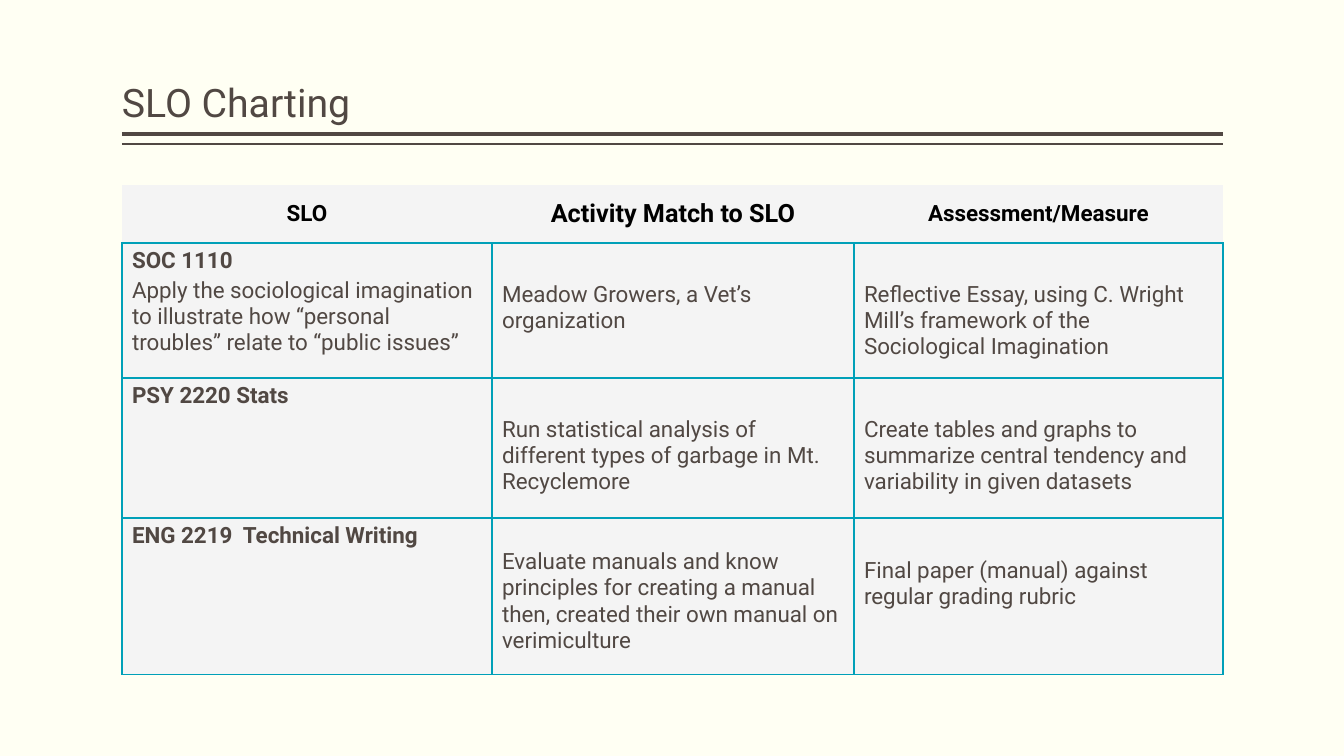
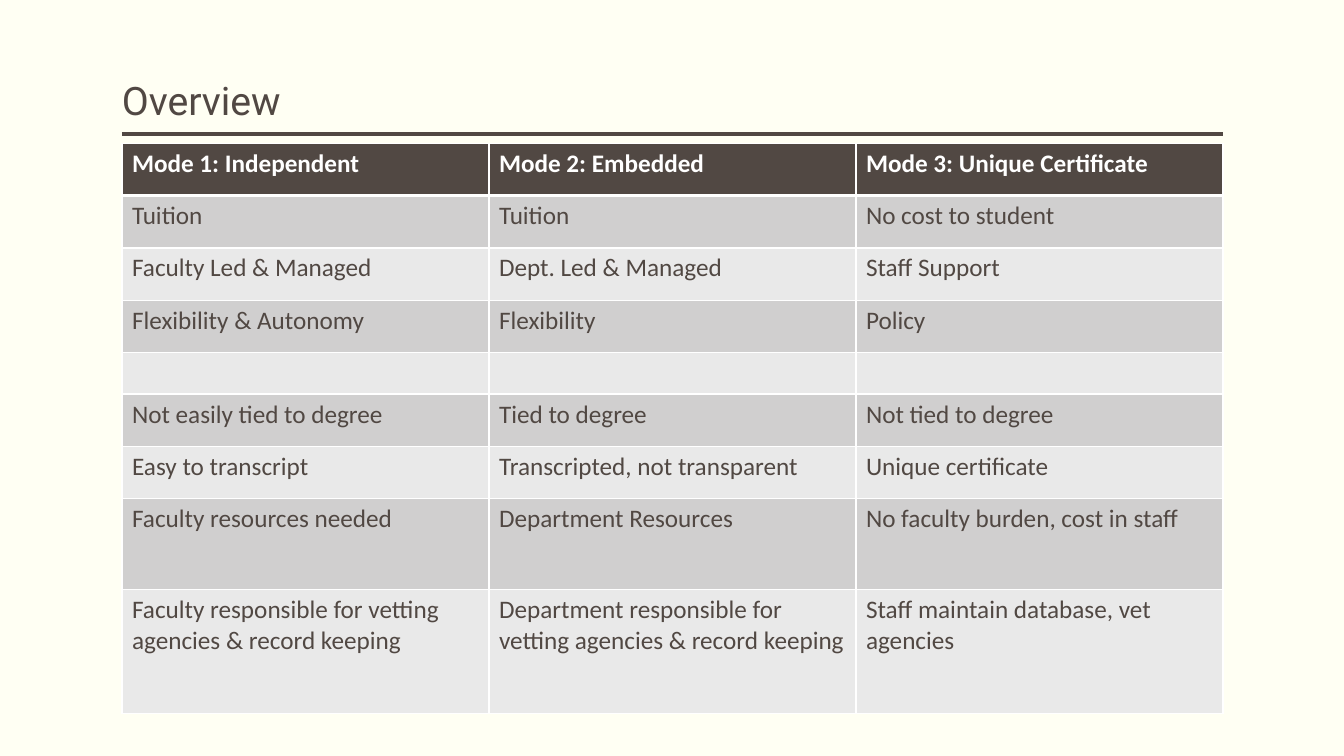
from dataclasses import dataclass

from lxml import etree
from pptx import Presentation
from pptx.dml.color import RGBColor
from pptx.enum.shapes import MSO_CONNECTOR
from pptx.enum.text import MSO_ANCHOR, PP_ALIGN
from pptx.oxml.ns import qn
from pptx.util import Inches, Pt

STRAIGHT = MSO_CONNECTOR.STRAIGHT
TOP, MIDDLE, BOTTOM = MSO_ANCHOR.TOP, MSO_ANCHOR.MIDDLE, MSO_ANCHOR.BOTTOM
LEFT, CENTER = PP_ALIGN.LEFT, PP_ALIGN.CENTER
PLAIN_TABLE = "{2D5ABB26-0587-4C30-8999-92F81FD0307C}"


@dataclass(frozen=True)
class Theme:
    paper: str = "FFFFF3"
    ink: str = "514843"
    black: str = "000000"
    white: str = "FFFFFF"
    teal: str = "00A0B8"
    pale: str = "F4F4F4"
    bands: tuple = ("D0CFCF", "E9E9E9")
    title_font: str = "Roboto"
    table_font: str = "Calibri"
    title_size: int = 28
    large_size: int = 18
    body_size: int = 16


theme = Theme()
MARGIN, CONTENT_WIDTH = 1.21, 10.92


def write(para, text, *, size, font=theme.title_font, color=theme.ink,
          bold=False, align=LEFT, after=0, spacing=1.0):
    para.alignment = align
    para.space_before = Pt(0)
    para.space_after = Pt(after)
    para.line_spacing = spacing
    span = para.add_run()
    span.text = text
    span.font.size = Pt(size)
    span.font.name = font
    span.font.bold = bold
    span.font.color.rgb = RGBColor.from_string(color)


def style_cell(cell, fill, border, widths):
    """Fill the cell and rule its edges; widths maps L, R, T, B to points."""
    properties = cell._tc.get_or_add_tcPr()
    for edge in "LRTB":
        if edge in widths:
            line = etree.SubElement(properties, qn(f"a:ln{edge}"), w=str(Pt(widths[edge])))
            paint = etree.SubElement(line, qn("a:solidFill"))
            etree.SubElement(paint, qn("a:srgbClr"), val=border)
    cell.fill.solid()
    cell.fill.fore_color.rgb = RGBColor.from_string(fill)


deck = Presentation()
deck.slide_width, deck.slide_height = Inches(13.33), Inches(7.5)
paper = deck.slide_master.background.fill
paper.solid()
paper.fore_color.rgb = RGBColor.from_string(theme.paper)

# Title, title height, table top, column widths, row heights
layouts = [
    ("SLO Charting", 1.22, 1.84, [3.67, 3.59, 3.66], [0.57, 1.34, 1.39, 1.55]),
    ("Overview", 1.2, 1.42, [CONTENT_WIDTH / 3] * 3,
     [0.52] * 4 + [0.41] + [0.52] * 2 + [0.9, 1.23]),
]
tables = []
for title, title_height, table_top, columns, rows in layouts:
    page = deck.slides.add_slide(deck.slide_layouts[6])
    for y, weight in ((1.33, 3), (1.43, 1)):
        rule = page.shapes.add_connector(
            STRAIGHT, Inches(MARGIN), Inches(y), Inches(MARGIN + CONTENT_WIDTH), Inches(y))
        rule.line.color.rgb = RGBColor.from_string(theme.ink)
        rule.line.width = Pt(weight)
        etree.SubElement(rule.element.spPr, qn("a:effectLst"))

    box = page.shapes.add_textbox(
        Inches(MARGIN), Inches(0.08), Inches(CONTENT_WIDTH), Inches(title_height))
    frame = box.text_frame
    frame.word_wrap = True
    frame.vertical_anchor = BOTTOM
    frame.margin_left = frame.margin_right = 0
    write(frame.paragraphs[0], title, size=theme.title_size, spacing=0.9)

    holder = page.shapes.add_table(
        len(rows), len(columns), Inches(MARGIN), Inches(table_top),
        Inches(CONTENT_WIDTH), Inches(sum(rows)))
    for style in holder.element.iter(qn("a:tableStyleId")):
        style.text = PLAIN_TABLE
    table = holder.table
    table.first_row = table.horz_banding = False
    for column, width in zip(table.columns, columns):
        column.width = Inches(width)
    for row, height in zip(table.rows, rows):
        row.height = Inches(height)
    tables.append(table)

slo_table, overview_table = tables

# SLO table: header
slo_headers = [
    ("SLO", theme.body_size),
    ("Activity Match to SLO", theme.large_size),
    ("Assessment/Measure", theme.body_size),
]
for cell, (text, size) in zip(slo_table.rows[0].cells, slo_headers):
    style_cell(cell, theme.pale, theme.teal, {"B": 1})
    cell.vertical_anchor = MIDDLE
    cell.margin_left = cell.margin_right = Inches(0.04)
    cell.margin_top = cell.margin_bottom = 0
    write(cell.text_frame.paragraphs[0], text, size=size, color=theme.black,
          bold=True, align=CENTER, after=3)

# SLO table: course and outcome, then (top margin, text) for activity and measure
slo_rows = [
    (["SOC 1110", "Apply the sociological imagination to illustrate how “personal troubles” "
      "relate to “public issues”"],
     (0.39, "Meadow Growers, a Vet’s organization"),
     (0.39, "Reflective Essay, using C. Wright Mill’s framework of the Sociological Imagination")),
    (["PSY 2220 Stats"],
     (0.39, "Run statistical analysis of different types of garbage in Mt. Recyclemore"),
     (0.39, "Create tables and graphs to summarize central tendency and variability in given "
      "datasets")),
    (["ENG 2219  Technical Writing"],
     (0.31, "Evaluate manuals and know principles for creating a manual then, created their own "
      "manual on verimiculture"),
     (0.39, "Final paper (manual) against regular grading rubric")),
]
for row_index, (course, *details) in enumerate(slo_rows, start=1):
    cells = list(slo_table.rows[row_index].cells)
    for cell in cells:
        style_cell(cell, theme.pale, theme.teal, dict.fromkeys("LRTB", 1))
        cell.vertical_anchor = TOP
    frame = cells[0].text_frame
    for index, text in enumerate(course):
        para = frame.add_paragraph() if index else frame.paragraphs[0]
        write(para, text, size=theme.body_size, bold=index == 0, after=0 if index else 3)
    for cell, (top_margin, text) in zip(cells[1:], details):
        cell.margin_top = Inches(top_margin)
        write(cell.text_frame.paragraphs[0], text, size=theme.body_size)

# Overview table
overview_rows = [
    ("Mode 1: Independent", "Mode 2: Embedded", "Mode 3: Unique Certificate"),
    ("Tuition", "Tuition", "No cost to student"),
    ("Faculty Led & Managed", "Dept. Led & Managed", "Staff Support"),
    ("Flexibility & Autonomy", "Flexibility", "Policy"),
    ("", "", ""),
    ("Not easily tied to degree", "Tied to degree", "Not tied to degree"),
    ("Easy to transcript", "Transcripted, not transparent", "Unique certificate"),
    ("Faculty resources needed", "Department Resources", "No faculty burden, cost in staff"),
    ("Faculty responsible for vetting agencies & record keeping",
     "Department responsible for vetting agencies & record keeping",
     "Staff maintain database, vet agencies"),
]
for row_index, texts in enumerate(overview_rows):
    is_header = row_index == 0
    fill = theme.ink if is_header else theme.bands[(row_index - 1) % 2]
    widths = {"L": 1, "R": 1, "T": 3 if row_index == 1 else 1, "B": 3 if is_header else 1}
    for cell, text in zip(overview_table.rows[row_index].cells, texts):
        style_cell(cell, fill, theme.white, widths)
        if text:
            write(cell.text_frame.paragraphs[0], text, size=theme.large_size,
                  font=theme.table_font, bold=is_header,
                  color=theme.white if is_header else theme.ink)

deck.save("out.pptx")
